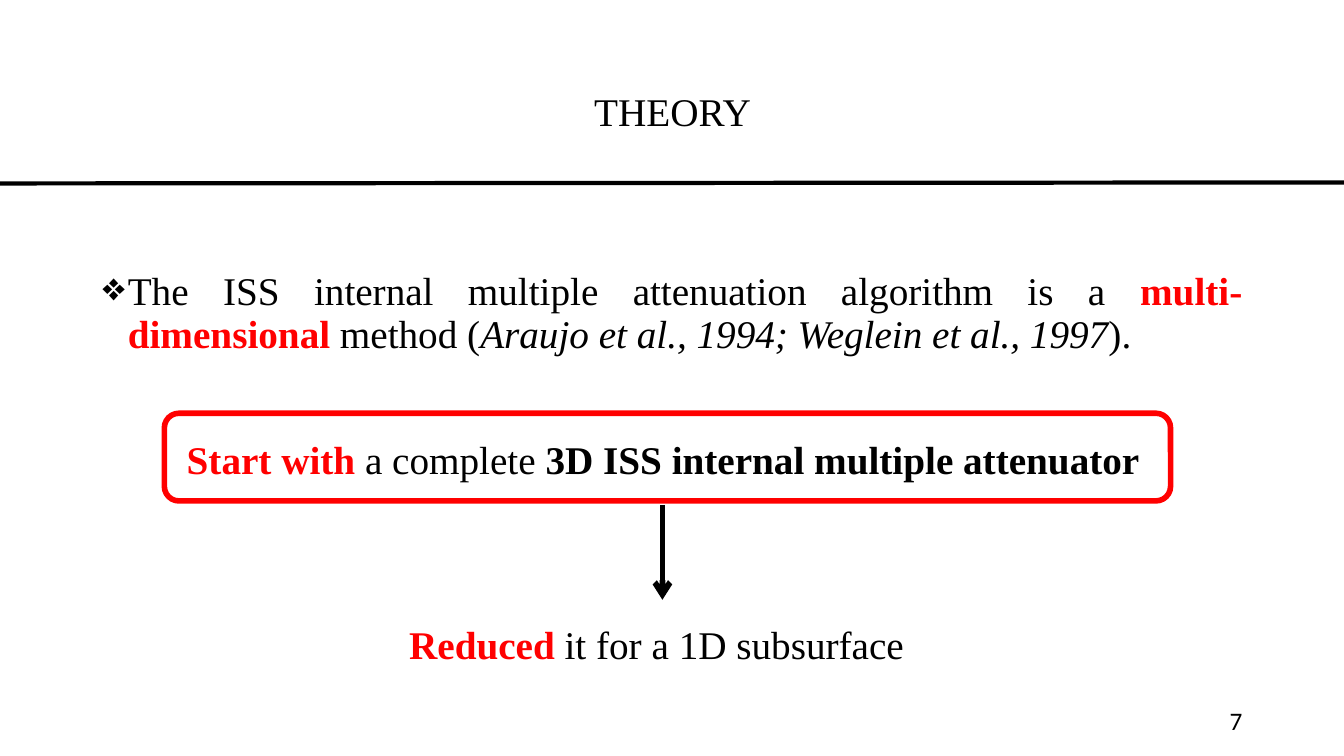
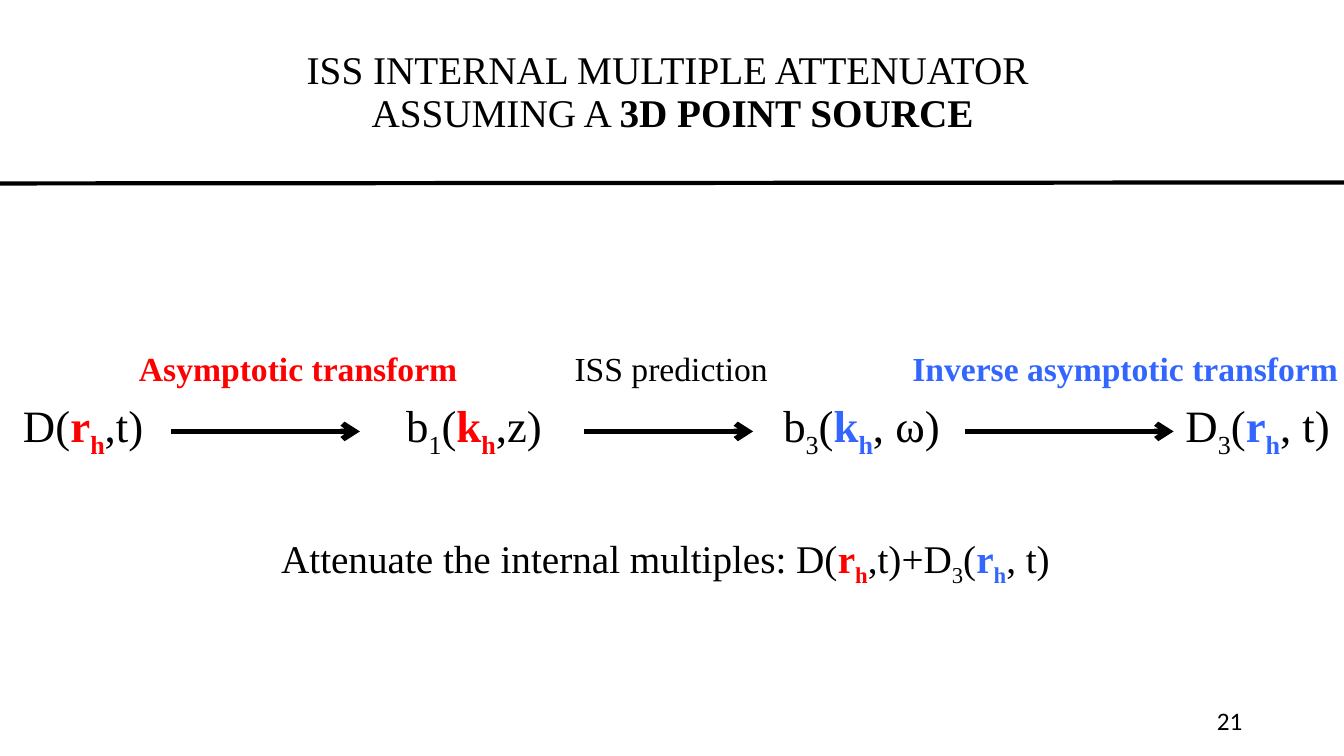
from lxml import etree
from pptx import Presentation
from pptx import util as u
from pptx.dml.color import RGBColor
from pptx.enum import shapes, text
from pptx.oxml import ns

PX = 9144  # 100 px to the inch
WIDTH, HEIGHT = 1333, 750
SERIF, SANS = "Times New Roman", "Calibri"
BLACK, RED, BLUE = "000000", "FF0000", "3366FF"
LEFT, CENTER, RIGHT, JUSTIFY = (text.PP_ALIGN.LEFT, text.PP_ALIGN.CENTER,
                                text.PP_ALIGN.RIGHT, text.PP_ALIGN.JUSTIFY)


def symbol(base, index, vector, color, rest):
    """Spans of a term such as b1(kh,z); the vector has subscript h."""
    spans = [(base, "")]
    if index:
        spans.append((index, "sub"))
    return spans + [("(", ""), (vector, "bold", color),
                    ("h", "bold sub", color), (rest + ")", "")]


# Content: a span is (text, style words, colour if not black)
DATA = symbol("D", "", "r", RED, ",t")
PREDICTED = symbol("D", "3", "r", BLUE, ", t")

THEORY = {
    "title": [("THEORY", "")],
    "title_height": 145,
    "number": "7",
    "point": [
        ("The ISS internal multiple attenuation algorithm is a ", ""),
        ("multi-dimensional ", "bold", RED),
        ("method (", ""),
        ("Araujo et al., 1994; Weglein et al., 1997", "italic"),
        (").", ""),
    ],
    "start": [("Start with ", "bold", RED), ("a complete ", ""),
              ("3D ISS internal multiple attenuator", "bold")],
    "result": [("Reduced", "bold", RED), (" it for a 1D subsurface", "")],
}

WORKFLOW = {
    "title": [("ISS INTERNAL MULTIPLE ATTENUATOR \nASSUMING A ", ""),
              ("3D POINT SOURCE", "bold")],
    "title_height": 105,
    "number": "21",
    # left, width, spans
    "terms": [
        (13, 150, DATA),
        (393, 178, symbol("b", "1", "k", RED, ",z")),
        (767, 198, symbol("b", "3", "k", BLUE, ", ω")),
        (1166, 167, PREDICTED),
    ],
    "steps": [
        (128, 344, [("Asymptotic transform", "bold", RED)]),
        (560, 224, [("ISS prediction", "")]),
        (895, 438, [("Inverse asymptotic transform", "bold", BLUE)]),
    ],
    "arrows": [(170, 357), (579, 747), (957, 1164)],  # from, to
    "summary": [("Attenuate the internal multiples: ", ""), *DATA, ("+", ""), *PREDICTED],
}


# Helpers
def px(*lengths):
    return [u.Emu(length * PX) for length in lengths]


def rgb(color):
    return RGBColor.from_string(color)


def write(frame, spans, size, font=SERIF, align=LEFT, spacing=None, bullet=None):
    para = frame.paragraphs[0]
    para.alignment = align
    if spacing:
        para.line_spacing = spacing
    if bullet:
        props = para._p.get_or_add_pPr()
        indent = px(25)[0]
        props.set("marL", str(indent))
        props.set("indent", str(-indent))
        etree.SubElement(props, ns.qn("a:buChar")).set("char", bullet)
    para.font.name = font
    para.font.size = u.Pt(size)
    for words, style, *color in spans:
        for number, line in enumerate(words.split("\n")):
            if number:
                para.add_line_break()
            span = para.add_run()
            span.text = line
            span.font.color.rgb = rgb(color[0] if color else BLACK)
            if "bold" in style:
                span.font.bold = True
            if "italic" in style:
                span.font.italic = True
            if "sub" in style:
                span.font._element.set("baseline", "-25000")


def add_text(page, place, spans, size, middle=False, right_inset=10, **look):
    frame = page.shapes.add_textbox(*px(*place)).text_frame
    frame.word_wrap = True
    frame.margin_right = px(right_inset)[0]
    if middle:
        frame.vertical_anchor = text.MSO_ANCHOR.MIDDLE
    write(frame, spans, size, **look)


def add_line(page, start, end, weight, arrow=False):
    line = page.shapes.add_connector(shapes.MSO_CONNECTOR.STRAIGHT, *px(*start, *end))
    line.line.color.rgb = rgb(BLACK)
    line.line.width = u.Pt(weight)
    if arrow:
        outline = line.line._get_or_add_ln()
        etree.SubElement(outline, ns.qn("a:tailEnd")).set("type", "arrow")
    etree.SubElement(line._element.spPr, ns.qn("a:effectLst"))


def add_page(deck, content):
    """Title, rule and page number shared by all slides."""
    page = deck.slides.add_slide(deck.slide_layouts[6])
    add_text(page, (92, 40, 1150, content["title_height"]), content["title"], 28,
             middle=True, align=CENTER, spacing=0.9)
    add_line(page, (0, 182), (WIDTH, 181), 3)
    add_text(page, (942, 695, 300, 40), [(content["number"], "")], 18,
             font=SANS, align=RIGHT)
    return page


# Slides
def build_theory(deck):
    page = add_page(deck, THEORY)
    add_text(page, (92, 265, 1150, 142), THEORY["point"], 28,
             align=JUSTIFY, spacing=0.9, bullet="❖")

    start = page.shapes.add_shape(shapes.MSO_SHAPE.ROUNDED_RECTANGLE,
                                  *px(163, 410, 998, 87))
    start.shadow.inherit = False
    start.fill.background()
    start.line.color.rgb = rgb(RED)
    start.line.width = u.Pt(4)
    frame = start.text_frame
    frame.word_wrap = True
    frame.vertical_anchor = text.MSO_ANCHOR.MIDDLE
    frame.margin_left, frame.margin_right, frame.margin_top = px(18, 0, 8)
    write(frame, THEORY["start"], 28)

    add_line(page, (657, 501), (657, 595), 4, arrow=True)
    add_text(page, (396, 610, 523, 57), THEORY["result"], 28)


def build_workflow(deck):
    page = add_page(deck, WORKFLOW)
    for row, top, height, size in (("steps", 340, 50, 24), ("terms", 390, 64, 32)):
        for left, width, spans in WORKFLOW[row]:
            add_text(page, (left, top, width, height), spans, size, right_inset=0)
    for start, end in WORKFLOW["arrows"]:
        add_line(page, (start, 428), (end, 428), 4, arrow=True)
    add_text(page, (269, 525, 796, 57), WORKFLOW["summary"], 28)


def main():
    deck = Presentation()
    deck.slide_width, deck.slide_height = px(WIDTH, HEIGHT)
    build_theory(deck)
    build_workflow(deck)
    deck.save("out.pptx")


if __name__ == "__main__":
    main()
